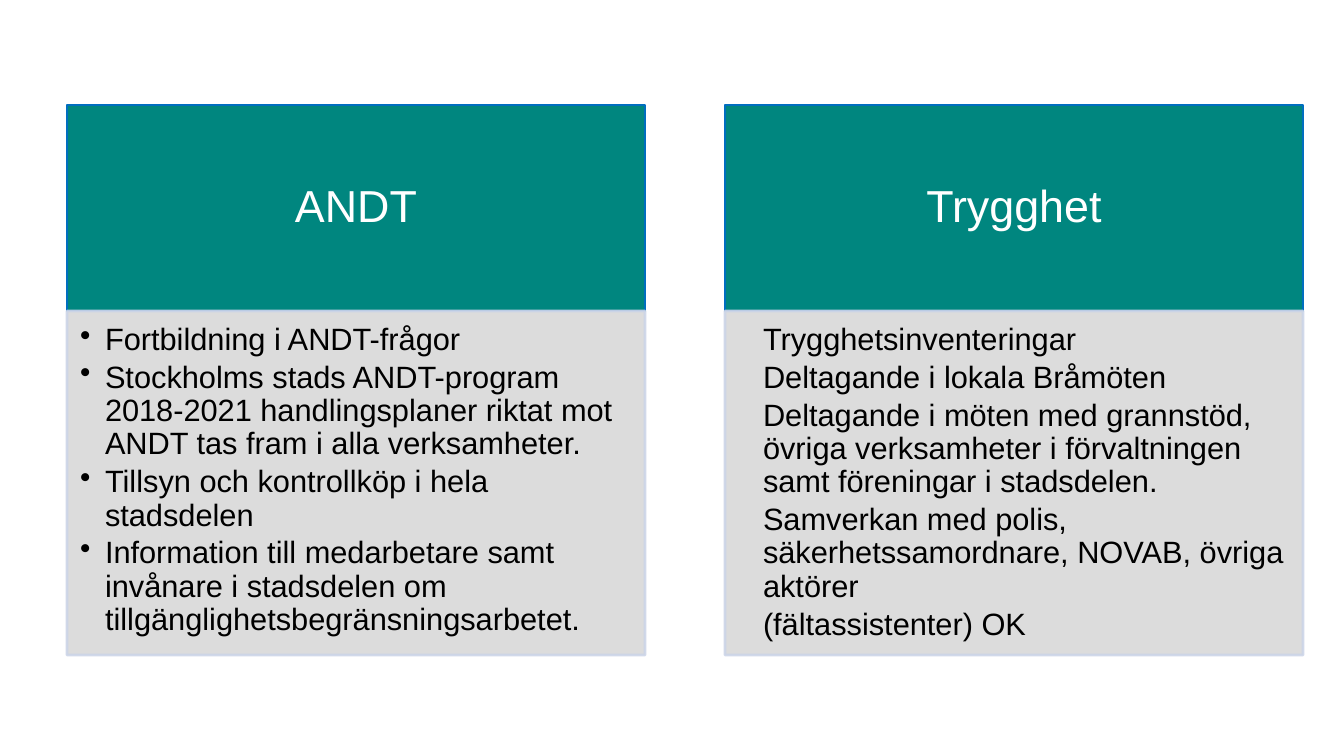
import pptx
import pptx.dml.color
import pptx.enum.shapes
import pptx.enum.text
import pptx.oxml.ns
import pptx.util
from lxml import etree

COLORS = {
    "teal": "00867F",
    "blue": "006EBF",
    "grey": "D9D9D9",
    "pale": "CCD5E8",
    "white": "FFFFFF",
    "black": "000000",
}
EMU_PER_PX = 914400 / 100.8

COLUMNS = [
    ("ANDT", True, [
        "Fortbildning i ANDT-frågor",
        "Stockholms stads ANDT-program 2018-2021 handlingsplaner riktat mot "
        "ANDT tas fram i alla verksamheter.",
        "Tillsyn och kontrollköp i hela stadsdelen",
        "Information till medarbetare samt invånare i stadsdelen om "
        "tillgänglighetsbegränsningsarbetet.",
    ]),
    ("Trygghet", False, [
        "Trygghetsinventeringar",
        "Deltagande i lokala Bråmöten",
        "Deltagande i möten med grannstöd, övriga verksamheter i "
        "förvaltningen samt föreningar i stadsdelen.",
        "Samverkan med polis, säkerhetssamordnare, NOVAB, övriga aktörer",
        "(fältassistenter) OK",
    ]),
]


def px(length):
    return pptx.util.Emu(round(length * EMU_PER_PX))


def rgb(name):
    return pptx.dml.color.RGBColor.from_string(COLORS[name])


class ColumnSlide:
    font = "Arial"

    def __init__(self, deck):
        self.slide = deck.slides.add_slide(deck.slide_layouts[6])

    def panel(self, box, fill, line, margins, anchor, alpha=None):
        panel = self.slide.shapes.add_shape(
            pptx.enum.shapes.MSO_SHAPE.RECTANGLE, *map(px, box))
        panel.shadow.inherit = False
        panel.fill.solid()
        panel.fill.fore_color.rgb = rgb(fill)
        panel.line.color.rgb = rgb(line)
        panel.line.width = pptx.util.Pt(2)
        if alpha:
            for color in panel._element.spPr.iter(pptx.oxml.ns.qn("a:srgbClr")):
                etree.SubElement(color, pptx.oxml.ns.qn("a:alpha"),
                                 val=str(alpha * 1000))
        frame = panel.text_frame
        frame_format = {"word_wrap": True, "vertical_anchor": anchor}
        for side, margin in zip(("left", "top", "right", "bottom"), margins):
            frame_format[f"margin_{side}"] = px(margin)
        for key, value in frame_format.items():
            setattr(frame, key, value)
        return frame

    def fill_paragraph(self, paragraph, text, size, color, align, space_after):
        paragraph.text = text
        paragraph_format = {
            "alignment": align,
            "line_spacing": 0.9,
            "space_after": pptx.util.Pt(space_after),
        }
        for key, value in paragraph_format.items():
            setattr(paragraph, key, value)
        font_format = {"name": self.font, "size": pptx.util.Pt(size)}
        for key, value in font_format.items():
            setattr(paragraph.font, key, value)
        paragraph.font.color.rgb = rgb(color)

    def heading(self, box, title):
        frame = self.panel(box, "teal", "blue", (25, 14, 25, 14),
                           pptx.enum.text.MSO_ANCHOR.MIDDLE)
        self.fill_paragraph(frame.paragraphs[0], title, 32, "white",
                            pptx.enum.text.PP_ALIGN.CENTER, 11.2)

    def body(self, box, points, bulleted):
        frame = self.panel(box, "grey", "pale", (13, 13, 17, 19),
                           pptx.enum.text.MSO_ANCHOR.TOP, alpha=90)
        indent = px(25)
        for number, point in enumerate(points):
            paragraph = frame.add_paragraph() if number else frame.paragraphs[0]
            properties = paragraph._p.get_or_add_pPr()
            properties.set("marL", str(indent))
            properties.set("indent", str(-indent if bulleted else 0))
            if bulleted:
                etree.SubElement(properties, pptx.oxml.ns.qn("a:buChar"), char="•")
            else:
                etree.SubElement(properties, pptx.oxml.ns.qn("a:buNone"))
            self.fill_paragraph(paragraph, point, 22, "black",
                                pptx.enum.text.PP_ALIGN.LEFT, 3.3)


def main():
    deck = pptx.Presentation()
    deck.slide_width, deck.slide_height = px(1344), px(756)
    areas = ColumnSlide(deck)

    # Two equal columns, each a heading above its points
    left, top, width, pitch = 67, 105, 578, 658
    heading_height, body_height = 206, 344
    for column, (title, bulleted, points) in enumerate(COLUMNS):
        x = left + column * pitch
        areas.heading((x, top, width, heading_height), title)
        areas.body((x, top + heading_height, width, body_height),
                   points, bulleted)

    deck.save("out.pptx")


if __name__ == "__main__":
    main()
